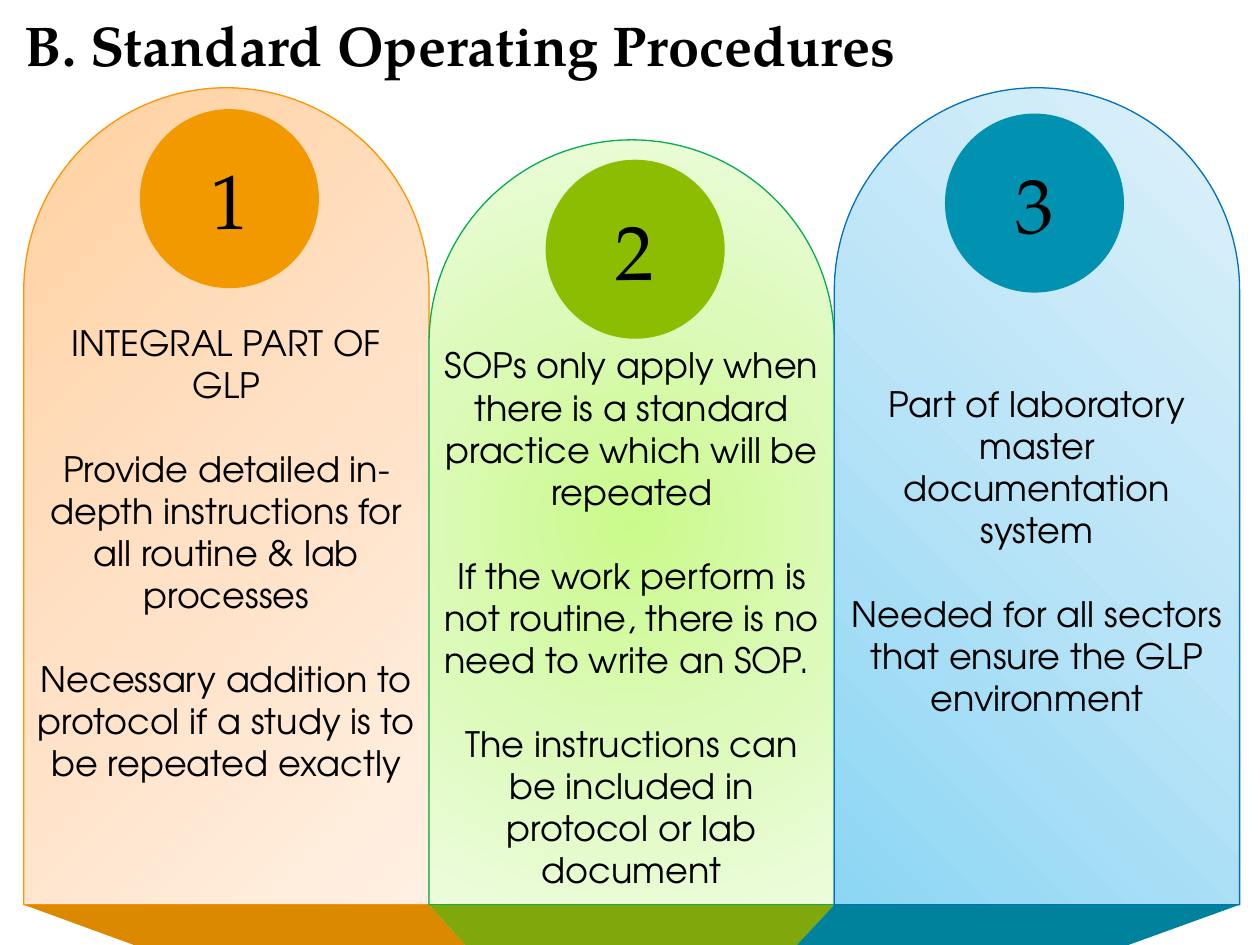
import pptx
import pptx.util
import pptx.dml.color
import pptx.enum.shapes
import pptx.enum.text
import pptx.oxml
import pptx.oxml.ns

Cm = pptx.util.Cm
KINDS = pptx.enum.shapes.MSO_SHAPE
ALIGN = pptx.enum.text.PP_ALIGN

# Content: one entry per arch (lengths in cm)
TITLE = "B. Standard Operating Procedures"
PARTS = [
    dict(num="1", top=1.77, disc=(2.82, 2.2), note=(6.35, 9.65), lines=[
        "INTEGRAL PART OF GLP",
        "Provide detailed in-depth instructions for all routine & lab processes",
        "Necessary addition to protocol if a study is to be repeated exactly"]),
    dict(num="2", top=2.82, disc=(11, 3.22), note=(6.81, 11.38), lines=[
        "SOPs only apply when there is a standard practice which will be repeated",
        "If the work perform is not routine, there is no need to write an SOP. ",
        "The instructions can be included in protocol or lab document"]),
    dict(num="3", top=1.77, disc=(19.05, 2.29), note=(7.59, 7.09), lines=[
        "Part of laboratory master documentation system",
        "Needed for all sectors that ensure the GLP environment"]),
]

THEME = dict(
    serif="TeX Gyre Pagella", sans="TeX Gyre Adventor",
    ink="000000", page="FFFFFF", head=32, digit=44, body=20, gap=24,
    looks=[
        dict(fade=("FFD1A0", "FFE1C5", "FFF0E3"), angle=45,
             edge="FF9300", disc="F29900", slab="DB8A00"),
        dict(fade=("CAFA8B", "DCFAB9", "EDFCDD"), angle=None,
             edge="00B050", disc="8CBD00", slab="80A80D"),
        dict(fade=("8CD6F4", "BAE4F7", "DEF1FA"), angle=315,
             edge="0070C0", disc="0092B0", slab="00819C"),
    ])

# Grid: three equal arches on one floor, with slabs that narrow below it
LEFT, WIDE, FLOOR = 0.48, 8.17, 18.24
FOOT, STEP, DEEP = 4.45, 5.51, 19.69
DISC = 3.61


def rgb(code):
    return pptx.dml.color.RGBColor.from_string(code)


def write(shape, text, font, size, bold=False, align=ALIGN.CENTER, gap=0):
    """Put one string or a list of paragraphs into a shape."""
    frame = shape.text_frame
    frame.word_wrap = True
    lines = [text] if isinstance(text, str) else text
    for i, line in enumerate(lines):
        para = frame.add_paragraph() if i else frame.paragraphs[0]
        para.alignment = align
        para.space_before = pptx.util.Pt(gap if i else 0)
        run = para.add_run()
        run.text = line
        run.font.name, run.font.size = font, pptx.util.Pt(size)
        run.font.bold, run.font.color.rgb = bold, rgb(THEME["ink"])


def paint(shape, color):
    shape.shadow.inherit = False
    shape.fill.solid()
    shape.fill.fore_color.rgb = rgb(color)
    shape.line.fill.background()


def fade(shape, colors, angle):
    """Three-stop gradient: linear at an angle, or round from the centre."""
    stops = "".join(f'<a:gs pos="{i * 50000}"><a:srgbClr val="{c}"/></a:gs>'
                    for i, c in enumerate(colors))
    if angle is None:
        way = ('<a:path path="circle"><a:fillToRect l="50000" t="50000" '
               'r="50000" b="50000"/></a:path>')
    else:
        way = f'<a:lin ang="{angle * 60000}" scaled="0"/>'
    names = pptx.oxml.ns.nsdecls("a")
    grad = pptx.oxml.parse_xml(
        f'<a:gradFill {names} rotWithShape="1"><a:gsLst>{stops}</a:gsLst>{way}</a:gradFill>')
    solid = shape.fill._xPr.find(pptx.oxml.ns.qn("a:solidFill"))
    solid.getparent().replace(solid, grad)


def main():
    deck = pptx.Presentation()
    deck.slide_width, deck.slide_height = Cm(25.4), Cm(19.05)
    slide = deck.slides.add_slide(deck.slide_layouts[6])
    slide.background.fill.solid()
    slide.background.fill.fore_color.rgb = rgb(THEME["page"])
    shapes = slide.shapes

    # Title
    box = shapes.add_textbox(Cm(0.25), Cm(0.08), Cm(20.96), Cm(1.68))
    write(box, TITLE, THEME["serif"], THEME["head"], bold=True, align=ALIGN.LEFT)

    for i, (part, look) in enumerate(zip(PARTS, THEME["looks"])):
        x, foot = LEFT + i * WIDE, FOOT + i * STEP

        # Arch
        arch = shapes.add_shape(KINDS.ROUND_2_SAME_RECTANGLE, Cm(x), Cm(part["top"]),
                                Cm(WIDE), Cm(FLOOR - part["top"]))
        arch.adjustments[0] = 0.5
        paint(arch, look["fade"][0])
        fade(arch, look["fade"], look["angle"])
        arch.line.color.rgb = rgb(look["edge"])
        arch.line.width = pptx.util.Pt(0.75)

        # Numbered disc
        dx, dy = part["disc"]
        disc = shapes.add_shape(KINDS.OVAL, Cm(dx), Cm(dy), Cm(DISC), Cm(DISC))
        paint(disc, look["disc"])
        write(disc, part["num"], THEME["serif"], THEME["digit"])

        # Slab under the arch
        pen = shapes.build_freeform(Cm(x), Cm(FLOOR))
        pen.add_line_segments([(Cm(x + WIDE), Cm(FLOOR)), (Cm(foot + STEP), Cm(DEEP)),
                               (Cm(foot), Cm(DEEP))], close=True)
        paint(pen.convert_to_shape(), look["slab"])

        # Body text
        top, tall = part["note"]
        note = shapes.add_textbox(Cm(x), Cm(top), Cm(WIDE), Cm(tall))
        write(note, part["lines"], THEME["sans"], THEME["body"], gap=THEME["gap"])

    deck.save("out.pptx")


if __name__ == "__main__":
    main()
